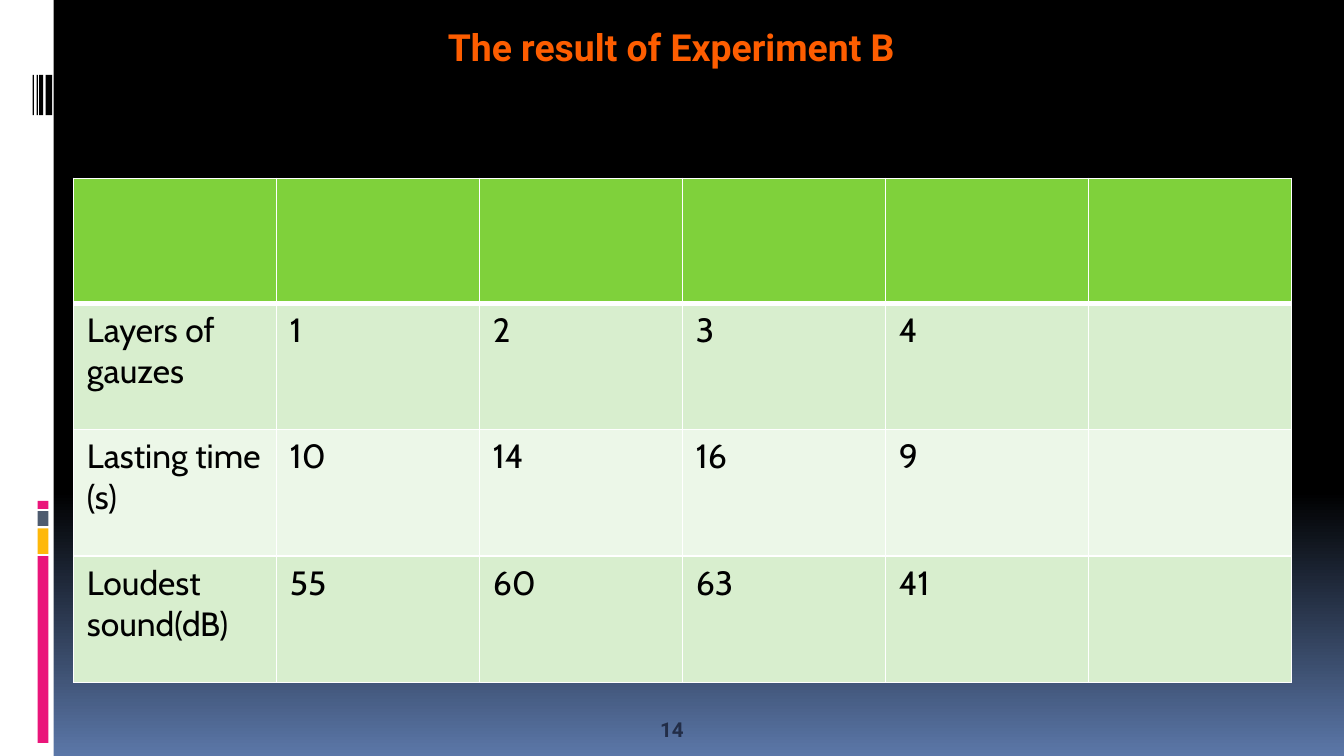
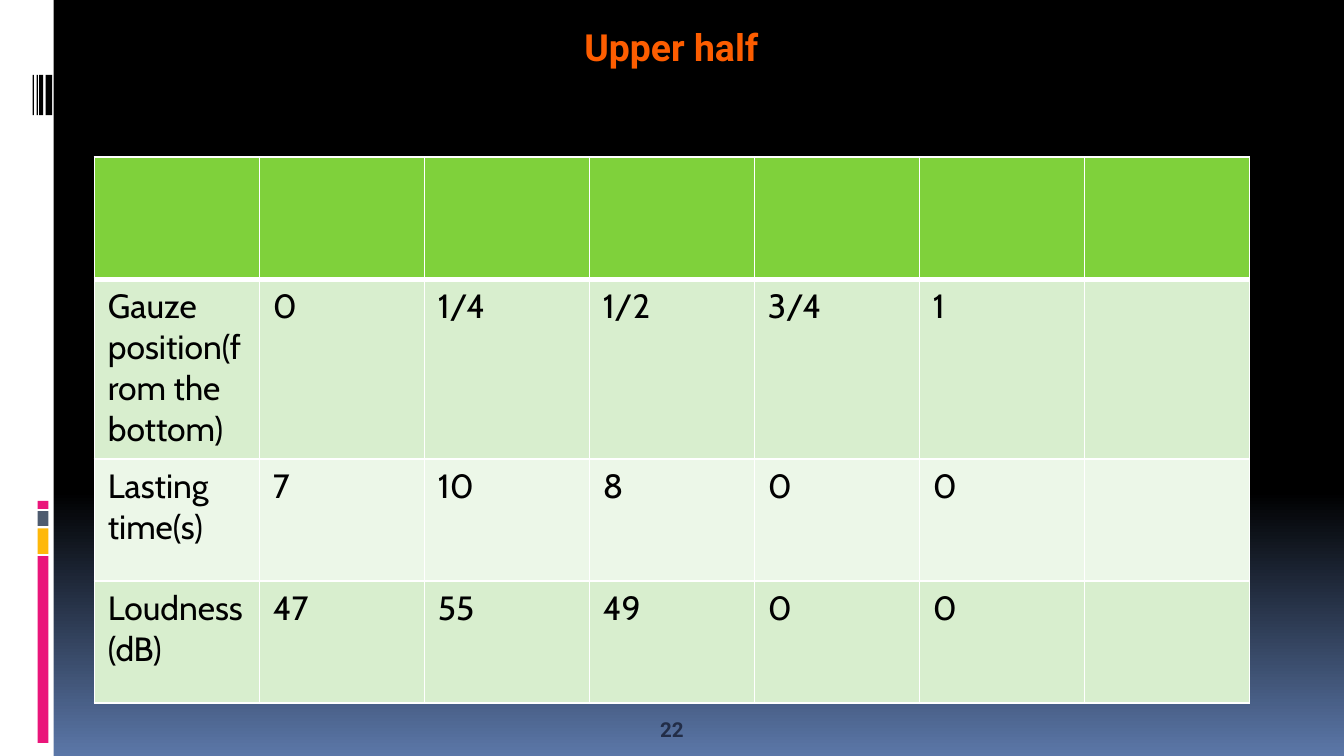
from dataclasses import dataclass
from typing import NamedTuple

from lxml.etree import SubElement
from pptx import Presentation
from pptx.dml.color import RGBColor as RGB
from pptx.enum.shapes import MSO_SHAPE as SHAPE
from pptx.enum.text import MSO_ANCHOR as ANCHOR, MSO_AUTO_SIZE as AUTO, PP_ALIGN as ALIGN
from pptx.oxml.ns import qn
from pptx.slide import Slide
from pptx.table import _Cell as Cell
from pptx.text.text import TextFrame, _Paragraph as Paragraph
from pptx.util import Pt


@dataclass(frozen=True)
class Theme:
    white: str = "FFFFFF"
    black: str = "000000"
    glow: str = "5B77A8"
    pink: str = "EA157A"
    amber: str = "FEB80A"
    slate: str = "4E5B6F"
    title: str = "FD5D00"
    number: str = "222D47"
    header: str = "7FD13B"
    bands: tuple[str, str] = ("D8EECE", "ECF7E8")
    heading_font: str = "Roboto"
    body_font: str = "Cabin"
    title_size: float = 20
    body_size: float = 18
    number_size: float = 11
    thin: float = 1
    thick: float = 3


class Box(NamedTuple):
    left: float
    top: float
    width: float
    height: float


class Bar(NamedTuple):
    box: Box
    color: str


class ResultTable(NamedTuple):
    left: float
    top: float
    column_width: float
    row_heights: list[float]
    rows: list[list[str]]


class ResultSlide(NamedTuple):
    title: str
    number: int
    table: ResultTable


T = Theme()
WIDTH, HEIGHT = 720, 405

BARS = [
    Bar(Box(0, 0, 28.8, HEIGHT), T.white),
    *(Bar(Box(20.2, top, 5.7, height), color) for top, height, color in [
        (298, 100, T.pink), (283, 13.7, T.amber), (273.8, 8, T.slate), (268.3, 4.4, T.pink)]),
    *(Bar(Box(left, 40.2, width, 21.5), T.black) for left, width in [
        (24.4, 3.6), (21, 2.2), (19.6, 0.7), (17.5, 0.7)]),
]
TITLE_BOX = Box(54, 15.8, 611.5, 21.6)
NUMBER_BOX = Box(276, 380.8, 168, 20)

SLIDES = [
    ResultSlide("The result of Experiment B", 14, ResultTable(
        39.4, 95.6, 108.75, [66.8, 67.8, 67.8, 67.8], [
            ["Layers of gauzes", "1", "2", "3", "4", ""],
            ["Lasting time\n(s)", "10", "14", "16", "9", ""],
            ["Loudest sound(dB)", "55", "60", "63", "41", ""],
        ])),
    ResultSlide("Upper half", 22, ResultTable(
        50.6, 84.2, 88.4, [65.4, 96.4, 65.4, 65.4], [
            ["Gauze position(from the bottom)", "0", "1/4", "1/2", "3/4", "1", ""],
            ["Lasting time(s)", "7", "10", "8", "0", "0", ""],
            ["Loudness(dB)", "47", "55", "49", "0", "0", ""],
        ])),
]


def set_all(target: object, values: dict) -> None:
    for name, value in values.items():
        setattr(target, name, value)


def style(p: Paragraph, font: str, size: float, color: str, bold: bool = False) -> None:
    for r in p.runs:
        set_all(r.font, {"name": font, "size": Pt(size), "bold": bold})
        r.font.color.rgb = RGB.from_string(color)


def paint_background(s: Slide) -> None:
    fill = s.background.fill
    fill.gradient()
    fill.gradient_angle = 270
    for stop, position, color in zip(fill.gradient_stops, (0.65, 1), (T.black, T.glow)):
        stop.position = position
        stop.color.rgb = RGB.from_string(color)


def add_bar(s: Slide, bar: Bar) -> None:
    sp = s.shapes.add_shape(SHAPE.RECTANGLE, *map(Pt, bar.box))
    sp.shadow.inherit = False
    sp.fill.solid()
    sp.fill.fore_color.rgb = RGB.from_string(bar.color)
    sp.line.fill.background()


def add_label(s: Slide, box: Box, text: str, size: float, color: str) -> TextFrame:
    tf = s.shapes.add_textbox(*map(Pt, box)).text_frame
    tf.word_wrap = True
    tf.text = text
    p = tf.paragraphs[0]
    p.alignment = ALIGN.CENTER
    style(p, T.heading_font, size, color, bold=True)
    return tf


def add_title(s: Slide, text: str) -> None:
    tf = add_label(s, TITLE_BOX, text, T.title_size, T.title)
    margins = {f"margin_{side}": 0 for side in ("left", "top", "right", "bottom")}
    set_all(tf, {**margins, "auto_size": AUTO.SHAPE_TO_FIT_TEXT})
    tf.paragraphs[0].line_spacing = 0.9


def add_number(s: Slide, number: int) -> None:
    tf = add_label(s, NUMBER_BOX, str(number), T.number_size, T.number)
    tf.vertical_anchor = ANCHOR.BOTTOM


def set_borders(cell: Cell, widths: dict[str, float]) -> None:
    props = cell._tc.get_or_add_tcPr()
    for side in "LRTB":
        line = SubElement(props, qn(f"a:ln{side}"), w=str(Pt(widths.get(side, T.thin))))
        fill = SubElement(line, qn("a:solidFill"))
        SubElement(fill, qn("a:srgbClr"), val=T.white)


def fill_cell(cell: Cell, text: str, row: int) -> None:
    set_borders(cell, {0: {"B": T.thick}, 1: {"T": T.thick}}.get(row, {}))
    cell.fill.solid()
    color = T.bands[(row - 1) % 2] if row else T.header
    cell.fill.fore_color.rgb = RGB.from_string(color)
    if text:
        cell.text = text
        for p in cell.text_frame.paragraphs:
            style(p, T.body_font, T.body_size, T.black)


def add_results(s: Slide, spec: ResultTable) -> None:
    columns = len(spec.rows[0])
    rows = [[""] * columns, *spec.rows]
    box = Box(spec.left, spec.top, spec.column_width * columns, sum(spec.row_heights))
    table = s.shapes.add_table(len(rows), columns, *map(Pt, box)).table
    for column in table.columns:
        column.width = Pt(spec.column_width)
    for i, (texts, height) in enumerate(zip(rows, spec.row_heights)):
        table.rows[i].height = Pt(height)
        for j, text in enumerate(texts):
            fill_cell(table.cell(i, j), text, i)


def main() -> None:
    prs = Presentation()
    set_all(prs, {"slide_width": Pt(WIDTH), "slide_height": Pt(HEIGHT)})
    for content in SLIDES:
        s = prs.slides.add_slide(prs.slide_layouts[6])
        paint_background(s)
        for bar in BARS:
            add_bar(s, bar)
        add_number(s, content.number)
        add_title(s, content.title)
        add_results(s, content.table)
    prs.save("out.pptx")


if __name__ == "__main__":
    main()
